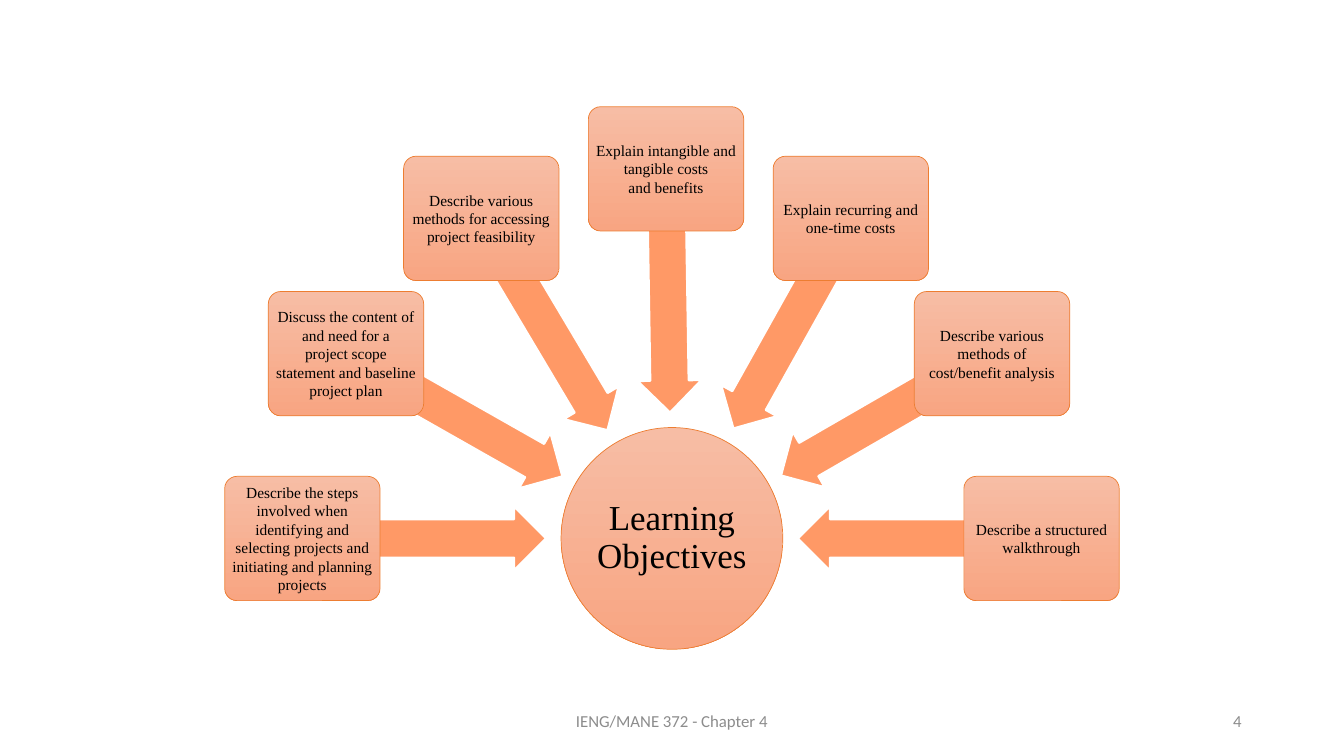
import math

import pptx
import pptx.dml.color
import pptx.enum.shapes
import pptx.enum.text
import pptx.util

RGBColor = pptx.dml.color.RGBColor
Shape = pptx.enum.shapes.MSO_SHAPE
Align = pptx.enum.text.PP_ALIGN
Anchor = pptx.enum.text.MSO_ANCHOR
Pt = pptx.util.Pt

PEACH = RGBColor(0xF7, 0xBD, 0xA5)
CORAL = RGBColor(0xF8, 0xA5, 0x82)
RUST = RGBColor(0xED, 0x7D, 0x31)
ORANGE = RGBColor(0xFF, 0x99, 0x66)
WHITE = RGBColor(0xFF, 0xFF, 0xFF)
BLACK = RGBColor(0, 0, 0)
GRAY = RGBColor(0x8C, 0x8C, 0x8C)

# The slide is a grid of 160 columns by 90 rows of square cells.
CELL = pptx.util.Inches(1) / 12
COLS, ROWS = 160, 90

HUB = (80, 64.1)
HUB_SIZE = 26.4
RING = 44      # hub centre to box centre
TIP = 15       # hub centre to arrow tip
BOX = (18.5, 14.8)
ARROW = 7.6    # arrow height
STEP = 30      # degrees between boxes

# Paragraphs of each box, clockwise from the left, and its sideways nudge.
GOALS = [
    (["Describe the steps involved when",
      "identifying and selecting projects and",
      "initiating and planning projects"], 0),
    (["Discuss the content of and need for a",
      "project scope statement and baseline",
      "project plan"], -0.7),
    (["Describe various methods for accessing", "project feasibility"], -0.7),
    (["Explain intangible and tangible costs", "and benefits"], -0.7),
    (["Explain recurring and one-time costs"], -0.7),
    (["Describe various methods of", "cost/benefit analysis"], 0),
    (["Describe a structured walkthrough"], 0),
]


def write(frame, lines, size=11, font="Times New Roman", color=BLACK,
          align=Align.CENTER, space=None, inset=None):
    """Fill a text frame with one paragraph per line."""
    frame.word_wrap = True
    frame.vertical_anchor = Anchor.MIDDLE
    if inset is not None:
        frame.margin_left = frame.margin_right = inset
        frame.margin_top = frame.margin_bottom = inset
    for i, line in enumerate(lines):
        para = frame.add_paragraph() if i else frame.paragraphs[0]
        para.alignment = align
        if space:
            para.line_spacing = space
        run = para.add_run()
        run.text = line
        run.font.size = Pt(size)
        run.font.name = font
        run.font.color.rgb = color


class Deck:
    def __init__(self):
        self.show = pptx.Presentation()
        self.show.slide_width = round(COLS * CELL)
        self.show.slide_height = round(ROWS * CELL)
        self.slide = self.show.slides.add_slide(self.show.slide_layouts[6])

    def shape(self, kind, x, y, wide, high):
        """Add a shape centred on a grid point."""
        place = (x - wide / 2, y - high / 2, wide, high)
        item = self.slide.shapes.add_shape(
            kind, *(round(n * CELL) for n in place))
        item.shadow.inherit = False
        return item

    def panel(self, kind, x, y, wide, high, lines, **style):
        """Add a shaded shape that carries text."""
        item = self.shape(kind, x, y, wide, high)
        item.fill.gradient()
        item.fill.gradient_angle = 270
        for stop, color in zip(item.fill.gradient_stops, (PEACH, CORAL)):
            stop.color.rgb = color
        item.line.color.rgb = RUST
        item.line.width = Pt(0.5)
        write(item.text_frame, lines, inset=Pt(1.5), **style)
        return item

    def arrow(self, x, y):
        """Point an arrow from a box centre to the hub."""
        dx, dy = x - HUB[0], y - HUB[1]
        dist = math.hypot(dx, dy)
        mid = (dist + TIP) / 2 / dist
        item = self.shape(Shape.LEFT_ARROW, HUB[0] + dx * mid,
                          HUB[1] + dy * mid, dist - TIP, ARROW)
        item.adjustments[0], item.adjustments[1] = 0.6, 0.5
        item.rotation = math.degrees(math.atan2(dy, dx)) % 360
        item.fill.solid()
        item.fill.fore_color.rgb = ORANGE
        item.line.color.rgb = WHITE
        item.line.width = Pt(1.5)

    def goal(self, x, y, lines):
        self.arrow(x, y)
        box = self.panel(Shape.ROUNDED_RECTANGLE, x, y, *BOX, lines)
        box.adjustments[0] = 0.1

    def foot(self, left, wide, text, align):
        place = (left, 83.4, wide, 4.8)
        box = self.slide.shapes.add_textbox(*(round(n * CELL) for n in place))
        write(box.text_frame, [text], size=12, font="Calibri", color=GRAY,
              align=align)


def main():
    deck = Deck()
    deck.panel(Shape.OVAL, *HUB, HUB_SIZE, HUB_SIZE, ["Learning Objectives"],
               size=25, space=0.9)
    for i, (lines, nudge) in enumerate(GOALS):
        turn = math.radians(180 + STEP * i)
        deck.goal(HUB[0] + RING * math.cos(turn) + nudge,
                  HUB[1] + RING * math.sin(turn), lines)
    deck.foot(53, 54, "IENG/MANE 372 - Chapter 4", Align.CENTER)
    deck.foot(113, 36, "4", Align.RIGHT)
    deck.show.save("out.pptx")


if __name__ == "__main__":
    main()
